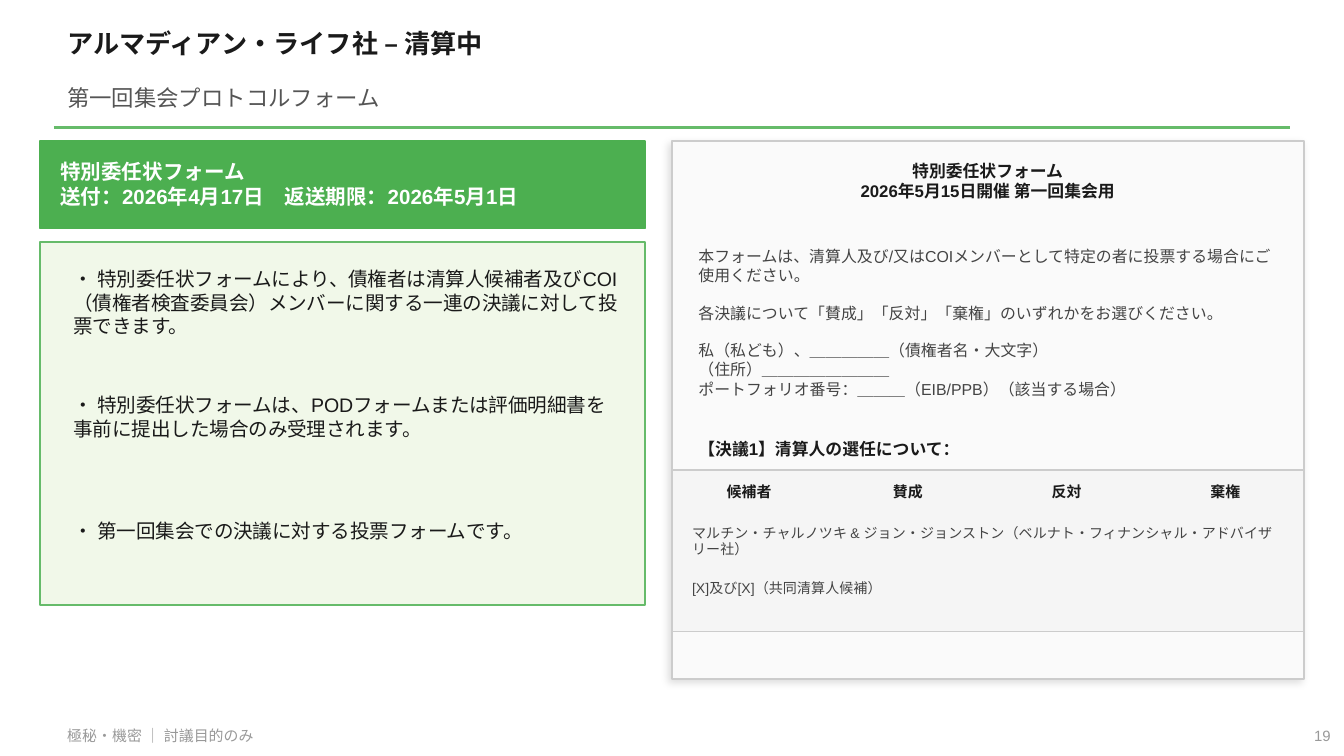
from lxml.etree import SubElement
from pptx import Presentation
from pptx.dml.color import RGBColor
from pptx.enum.shapes import MSO_CONNECTOR, MSO_SHAPE
from pptx.enum.text import MSO_ANCHOR, PP_ALIGN
from pptx.oxml.ns import qn
from pptx.util import Cm, Pt

INK, BODY, WHITE, MUTED = "1A1A1A", "444444", "FFFFFF", "999999"
GREEN, LEAF, MINT = "4CAF50", "66BB6A", "F1F8E9"
PAPER, PANEL, BORDER = "FAFAFA", "F5F5F5", "CCCCCC"


def color(value):
    return RGBColor.from_string(value)


class SlideBuilder:
    font_name = "Arial"

    def __init__(self, slide):
        self.slide = slide

    def text(self, left, top, width, height, content, size, ink=INK,
             bold=False, align=PP_ALIGN.LEFT, gaps=()):
        box = self.slide.shapes.add_textbox(Cm(left), Cm(top), Cm(width), Cm(height))
        frame = box.text_frame
        frame.word_wrap = True
        frame.vertical_anchor = MSO_ANCHOR.MIDDLE
        frame.text = content
        for index, paragraph in enumerate(frame.paragraphs):
            paragraph.alignment = align
            if index in gaps:
                paragraph.space_before = Pt(10)
            for run in paragraph.runs:
                run.font.name = self.font_name
                run.font.size = Pt(size)
                run.font.bold = bold
                run.font.color.rgb = color(ink)

    def panel(self, left, top, width, height, fill, border):
        panel = self.slide.shapes.add_shape(
            MSO_SHAPE.RECTANGLE, Cm(left), Cm(top), Cm(width), Cm(height))
        panel.shadow.inherit = False
        panel.fill.solid()
        panel.fill.fore_color.rgb = color(fill)
        panel.line.color.rgb = color(border)
        panel.line.width = Pt(1)
        return panel

    def raised_panel(self, left, top, width, height, fill, border):
        panel = self.panel(left, top, width, height, fill, border)
        effects = panel._element.spPr.find(qn("a:effectLst"))
        shadow = SubElement(effects, qn("a:outerShdw"), blurRad=str(Pt(4)),
                            dist=str(Pt(2)), dir=str(135 * 60000),
                            algn="bl", rotWithShape="0")
        tint = SubElement(shadow, qn("a:srgbClr"), val="000000")
        SubElement(tint, qn("a:alpha"), val="12000")

    def rule(self, left, right, top, ink):
        rule = self.slide.shapes.add_connector(
            MSO_CONNECTOR.STRAIGHT, Cm(left), Cm(top), Cm(right), Cm(top))
        rule.line.color.rgb = color(ink)
        rule.line.width = Pt(1.5)
        SubElement(rule._element.spPr, qn("a:effectLst"))


def add_header(builder):
    builder.text(1.02, 0.3, 23.37, 1.02, "アルマディアン・ライフ社 – 清算中", 14, bold=True)
    builder.text(1.02, 1.4, 23.37, 0.89, "第一回集会プロトコルフォーム", 12, "555555")
    builder.rule(1.02, 24.38, 2.41, LEAF)


def add_explanation(builder):
    builder.panel(0.76, 2.67, 11.43, 1.65, GREEN, GREEN)
    builder.text(0.89, 2.72, 11.18, 1.52,
                 "特別委任状フォーム\n送付：2026年4月17日　返送期限：2026年5月1日",
                 11, WHITE, bold=True)
    builder.panel(0.76, 4.57, 11.43, 6.86, MINT, LEAF)
    points = (
        "• 特別委任状フォームにより、債権者は清算人候補者及びCOI（債権者検査委員会）"
        "メンバーに関する一連の決議に対して投票できます。",
        "• 特別委任状フォームは、PODフォームまたは評価明細書を事前に提出した場合のみ受理されます。",
        "• 第一回集会での決議に対する投票フォームです。",
    )
    for row, point in enumerate(points):
        builder.text(1.14, 4.7 + 2.16 * row, 10.92, 2.03, point, 10.5)


def add_proxy_form(builder):
    builder.raised_panel(12.7, 2.67, 11.94, 10.16, PAPER, BORDER)
    builder.text(12.95, 2.79, 11.43, 1.27,
                 "特別委任状フォーム\n2026年5月15日開催 第一回集会用",
                 9, bold=True, align=PP_ALIGN.CENTER)
    instructions = (
        "本フォームは、清算人及び/又はCOIメンバーとして特定の者に投票する場合にご使用ください。",
        "各決議について「賛成」「反対」「棄権」のいずれかをお選びください。",
        "私（私ども）、＿＿＿＿＿（債権者名・大文字）",
        "（住所）＿＿＿＿＿＿＿＿",
        "ポートフォリオ番号：＿＿＿（EIB/PPB）（該当する場合）",
    )
    builder.text(12.95, 4.19, 11.43, 3.81, "\n".join(instructions), 8.5, BODY,
                 gaps=(1, 2))
    builder.text(12.95, 8.13, 11.43, 0.71, "【決議1】清算人の選任について：", 9, bold=True)
    builder.panel(12.7, 8.89, 11.94, 3.05, PANEL, BORDER)
    for column, heading in enumerate(("候補者", "賛成", "反対", "棄権")):
        builder.text(12.7 + 3 * column, 8.94, 2.92, 0.71, heading, 8,
                     bold=True, align=PP_ALIGN.CENTER)
    builder.text(12.83, 9.78, 11.56, 0.89,
                 "マルチン・チャルノツキ & ジョン・ジョンストン"
                 "（ベルナト・フィナンシャル・アドバイザリー社）", 7.5, BODY)
    builder.text(12.83, 10.8, 11.56, 0.64, "[X]及び[X]（共同清算人候補）", 7.5, BODY)


def add_footer(builder):
    builder.text(1.02, 13.59, 12.7, 0.64, "極秘・機密 ｜ 討議目的のみ", 8, MUTED)
    builder.text(24.13, 13.59, 1.27, 0.64, "19", 8, MUTED, align=PP_ALIGN.RIGHT)


def main():
    presentation = Presentation()
    presentation.slide_width = Cm(25.4)
    presentation.slide_height = Cm(14.29)
    builder = SlideBuilder(presentation.slides.add_slide(presentation.slide_layouts[6]))
    add_header(builder)
    add_explanation(builder)
    add_proxy_form(builder)
    add_footer(builder)
    presentation.save("out.pptx")


if __name__ == "__main__":
    main()
